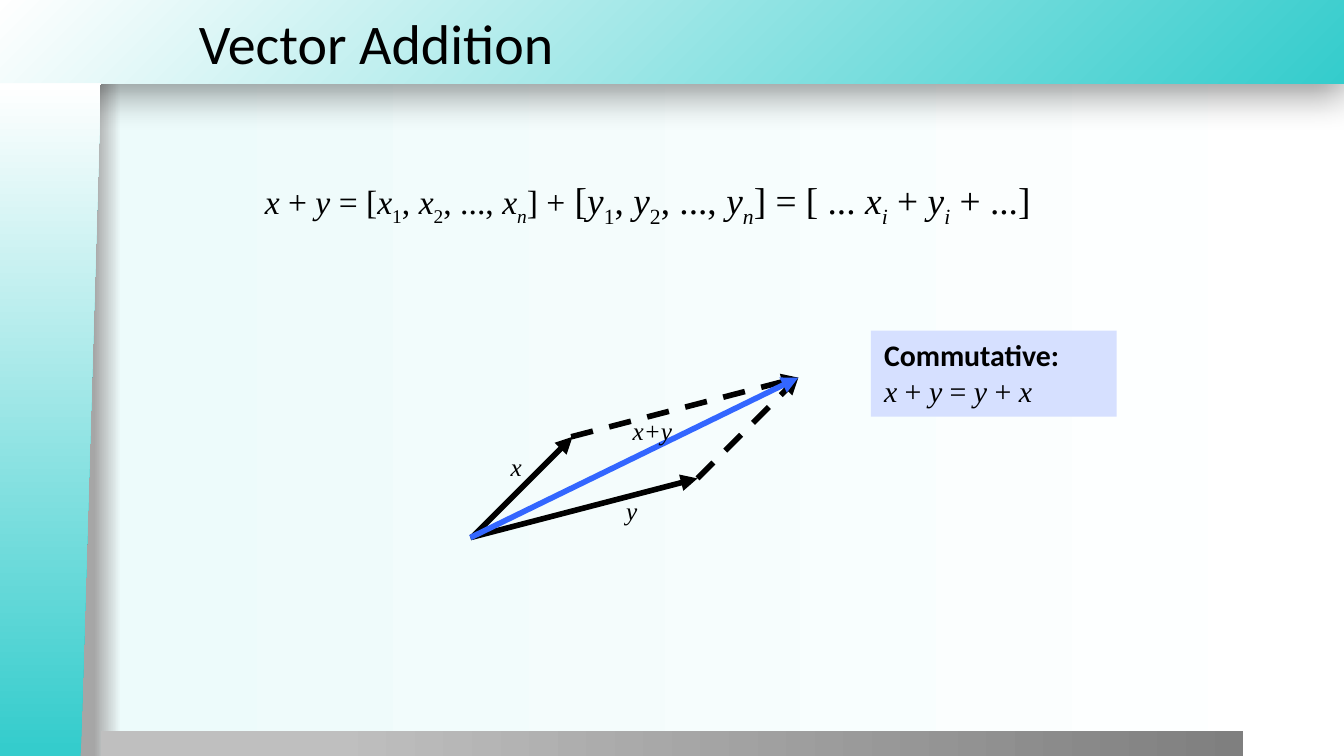
from itertools import groupby

from lxml import etree
from pptx import Presentation
from pptx.dml.color import RGBColor
from pptx.enum.dml import MSO_LINE
from pptx.enum.shapes import MSO_CONNECTOR, MSO_SHAPE
from pptx.enum.text import MSO_ANCHOR, PP_ALIGN
from pptx.oxml import parse_xml
from pptx.oxml.ns import nsdecls, qn
from pptx.util import Inches, Pt

DASH = MSO_LINE.DASH
STRAIGHT = MSO_CONNECTOR.STRAIGHT
RECTANGLE, MANUAL_INPUT = MSO_SHAPE.RECTANGLE, MSO_SHAPE.FLOWCHART_MANUAL_INPUT
LEFT, TOP, MIDDLE = PP_ALIGN.LEFT, MSO_ANCHOR.TOP, MSO_ANCHOR.MIDDLE

COLORS = {"black": "000000", "blue": "3366FF", "callout": "D6E0FF", "teal": "34CCCC",
          "white": "FFFFFF", "mist": "EDFBFB", "edge": "A6A6A6",
          "silver": "BFBFBF", "gray": "7F7F7F"}
SANS, SERIF = "Calibri", "Times New Roman"

# Content: in formulas letters are italic and "_" lowers the next character
TITLE = "Vector Addition"
EQUATION = [("x + y = [x_1, x_2, ..., x_n] +", 18),
            (" [y_1, y_2, ..., y_n] = [ ... x_i + y_i + ...]", 20)]
COMMUTATIVE = ("Commutative:", "x + y = y + x")

ORIGIN, X_TIP, Y_TIP, SUM_TIP = (3.5, 4), (4.25, 3.25), (5.19, 3.56), (5.94, 2.81)
ARROWS = [  # start, end, colour, dashed
    ((3.51, 4), (4.26, 3.25), "black", False),
    (ORIGIN, Y_TIP, "black", False),
    (X_TIP, SUM_TIP, "black", True),
    (Y_TIP, SUM_TIP, "black", True),
    (ORIGIN, SUM_TIP, "blue", False),
]
LABELS = [("x", (3.7, 3.31, 0.29, 0.33)), ("y", (4.56, 3.64, 0.29, 0.33)),
          ("x+y", (4.61, 3.04, 0.5, 0.33))]
BACKGROUND_STOPS = [(7, "edge"), (9, "mist"), (100, "white")]
DECORATIONS = [  # preset, box, stops, runs from the corner
    (RECTANGLE, (-0.01, 0, 10.01, 0.62), [(0, "teal"), (100, "white")], True),
    (RECTANGLE, (0.75, 5.44, 8.5, 0.2), [(20, "silver"), (100, "gray")], False),
    (MANUAL_INPUT, (-2.13, 2.75, 5.01, 0.75), [(1, "teal"), (100, "white")], False),
]


def rgb(name):
    return RGBColor.from_string(COLORS[name])


def inches(values):
    return [Inches(value) for value in values]


def set_gradient(fill, parent, stops, from_corner=False):
    """Replace the solid fill inside parent by a gradient."""
    fill.solid()
    stop_xml = "".join(f'<a:gs pos="{position * 1000}"><a:srgbClr val="{COLORS[name]}"/></a:gs>'
                       for position, name in stops)
    direction = ('<a:path path="circle"><a:fillToRect l="100000" t="100000"/></a:path>'
                 if from_corner else '<a:lin ang="0" scaled="0"/>')
    solid = parent.find(".//" + qn("a:solidFill"))
    solid.getparent().replace(solid, parse_xml(
        f'<a:gradFill {nsdecls("a")} rotWithShape="1"><a:gsLst>{stop_xml}</a:gsLst>'
        f'{direction}</a:gradFill>'))


def style(font, name, size):
    font.name, font.size = name, Pt(size)
    font.color.rgb = rgb("black")


def add_formula(paragraph, formula, size):
    characters = [(character, character.isalpha(), before == "_")
                  for before, character in zip(" " + formula, formula) if character != "_"]
    for (italic, lowered), group in groupby(characters, key=lambda item: item[1:]):
        run = paragraph.add_run()
        run.text = "".join(item[0] for item in group)
        style(run.font, SERIF, size)
        run.font.italic = italic
        if lowered:
            run._r.get_or_add_rPr().set("baseline", "-25000")


def add_arrow(slide, start, end, color, dashed):
    arrow = slide.shapes.add_connector(STRAIGHT, *inches(start + end))
    arrow.line.color.rgb = rgb(color)
    arrow.line.width = Pt(3)
    if dashed:
        arrow.line.dash_style = DASH
    etree.SubElement(arrow.line._get_or_add_ln(), qn("a:tailEnd"), type="triangle")
    etree.SubElement(arrow._element.spPr, qn("a:effectLst"))


presentation = Presentation()
presentation.slide_width = Inches(10)
presentation.slide_height = presentation.slide_width * 9 // 16
slide = presentation.slides.add_slide(presentation.slide_layouts[5])

# Background and frame
set_gradient(slide.background.fill, slide.element.cSld, BACKGROUND_STOPS)
frame = []
for preset, box, stops, from_corner in DECORATIONS:
    shape = slide.shapes.add_shape(preset, *inches(box))
    shape.shadow.inherit = False
    set_gradient(shape.fill, shape._element.spPr, stops, from_corner)
    shape.line.fill.background()
    frame.append(shape)
band, footer, side_bar = frame
side_bar.rotation = 270
side_bar._element.spPr.find(qn("a:xfrm")).set("flipV", "1")
band._element.spPr.find(qn("a:effectLst")).append(parse_xml(
    f'<a:outerShdw {nsdecls("a")} blurRad="{Pt(20)}" dist="{Pt(6)}" dir="5400000">'
    f'<a:srgbClr val="{COLORS["black"]}"><a:alpha val="40000"/></a:srgbClr></a:outerShdw>'))

# Title, in front of the band
title = slide.shapes.title
title.left, title.top, title.width, title.height = inches((1.38, 0, 8.63, 0.62))
title.text_frame.text = TITLE
title.text_frame.vertical_anchor = MIDDLE
paragraph = title.text_frame.paragraphs[0]
paragraph.alignment = LEFT
style(paragraph.font, SANS, 30)
slide.shapes._spTree.append(title._element)

# Vector diagram
for arrow in ARROWS:
    add_arrow(slide, *arrow)
for label, box in LABELS:
    text_frame = slide.shapes.add_textbox(*inches(box)).text_frame
    text_frame.word_wrap = False
    text_frame.text = label
    font = text_frame.paragraphs[0].font
    style(font, SERIF, 13.5)
    font.italic = True

# Equation
equation = slide.shapes.add_textbox(*inches((1.9, 1.28, 6.61, 0.3))).text_frame
equation.word_wrap = True
equation.margin_left = equation.margin_right = Inches(0.07)
equation.margin_top = equation.margin_bottom = Inches(0.04)
for formula, size in EQUATION:
    add_formula(equation.paragraphs[0], formula, size)

# Commutative law callout
callout = slide.shapes.add_shape(RECTANGLE, *inches((6.48, 2.46, 1.83, 0.64)))
callout.shadow.inherit = False
callout.fill.solid()
callout.fill.fore_color.rgb = rgb("callout")
callout.line.fill.background()
heading, law = COMMUTATIVE
text_frame = callout.text_frame
text_frame.word_wrap = True
text_frame.vertical_anchor = TOP
text_frame.text = heading
paragraph = text_frame.paragraphs[0]
style(paragraph.font, SANS, 16)
paragraph.font.bold = True
add_formula(text_frame.add_paragraph(), law, 16)
for paragraph in text_frame.paragraphs:
    paragraph.alignment = LEFT

presentation.save("out.pptx")
